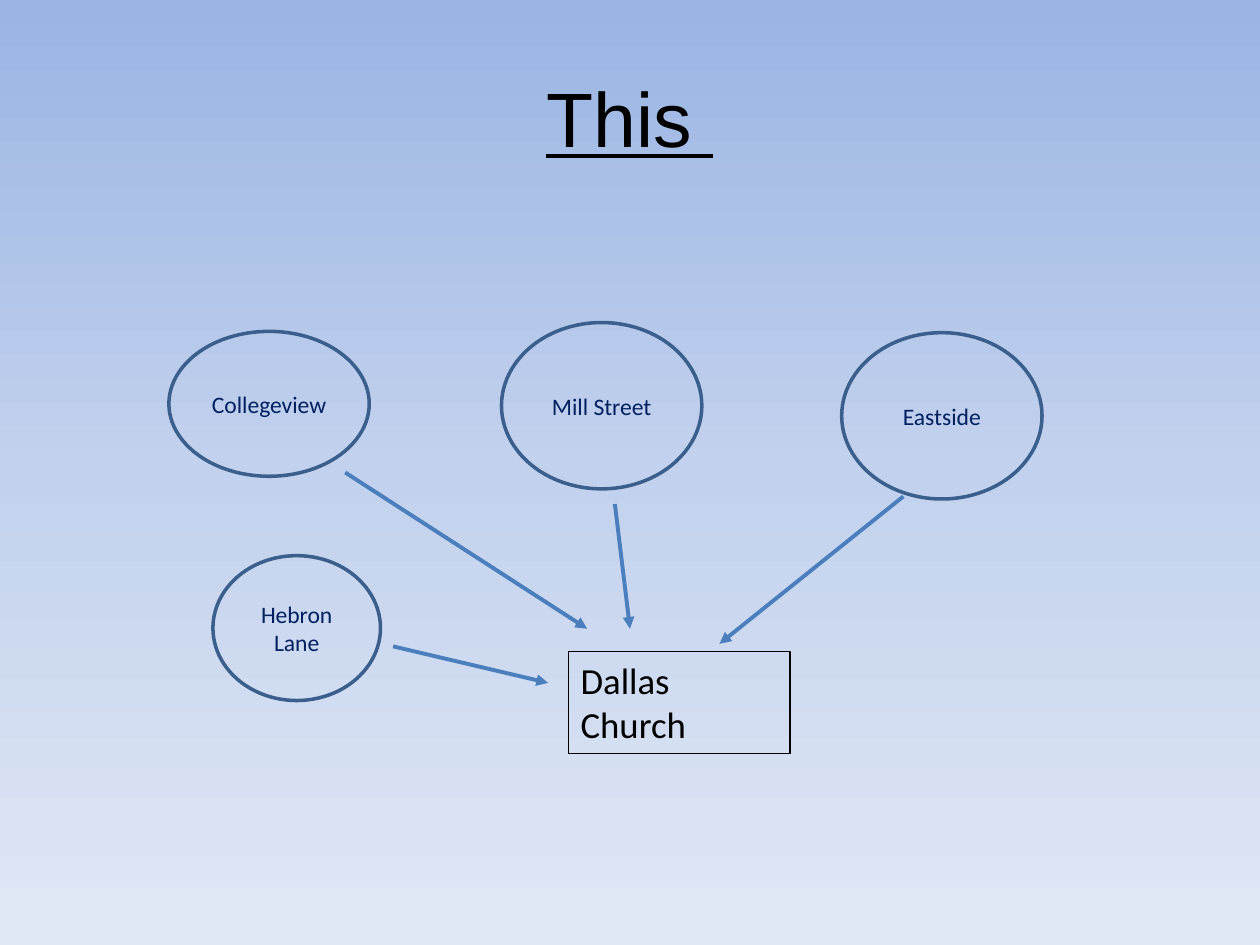
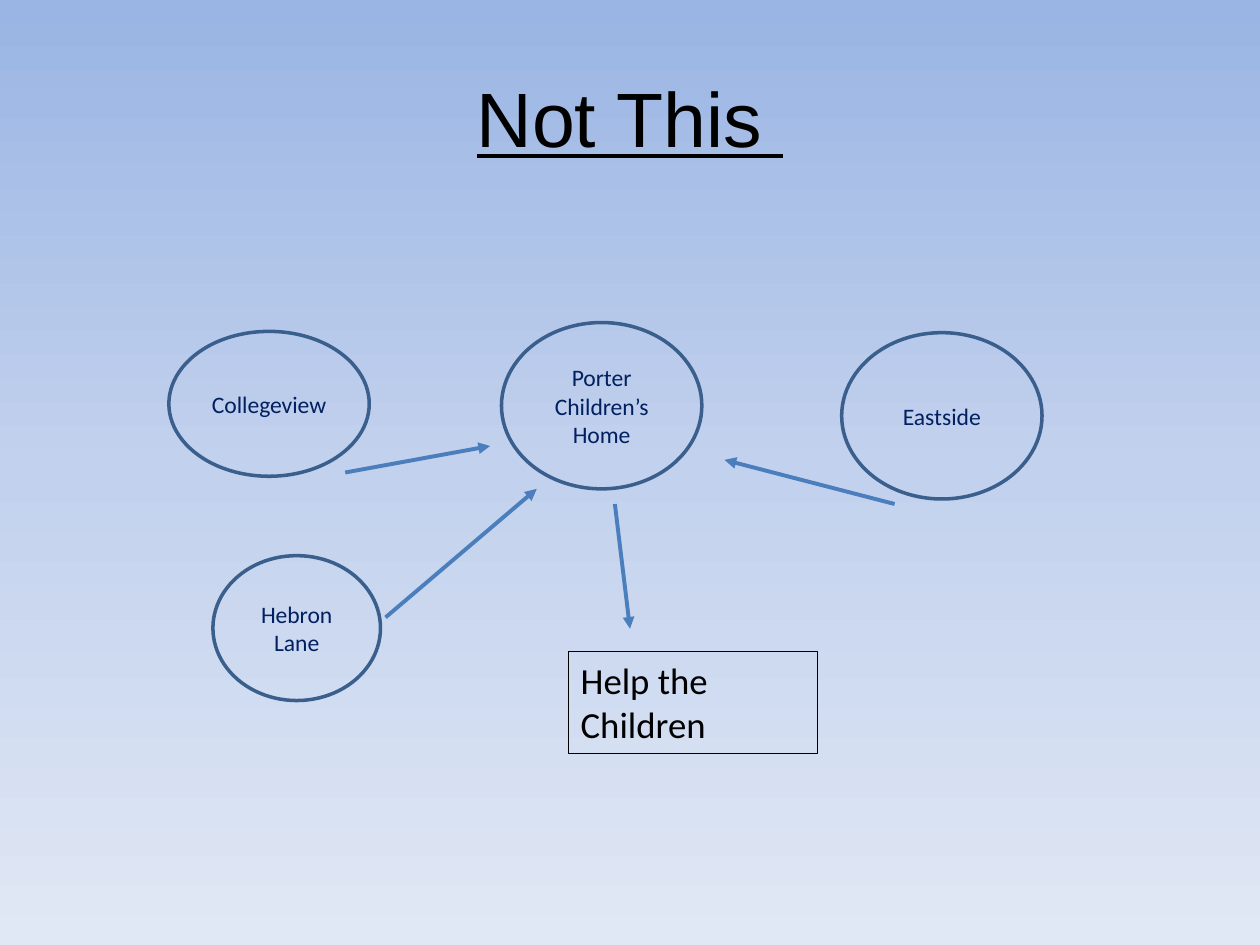
from copy import deepcopy
from dataclasses import dataclass

from pptx import Presentation
from pptx import util as u
from pptx.dml.color import RGBColor
from pptx.enum import shapes, text
from pptx.oxml.ns import qn
from pptx.oxml.xmlchemy import OxmlElement

PX = 9144  # one px is a hundredth of an inch


@dataclass(frozen=True)
class Theme:
    sky: tuple = ((0, "9AB5E4"), (0.5, "C2D1ED"), (1, "E1E8F5"))
    ink: str = "000000"
    navy: str = "002060"
    ring: str = "3A5F8C"
    arrow: str = "4B7EBC"
    title_font: str = "Arial"
    body_font: str = "Calibri"
    title_size: float = 44
    giver_size: float = 13.5
    goal_size: float = 21
    ring_width: float = 2
    arrow_width: float = 2.25
    frame_width: float = 0.75


@dataclass(frozen=True)
class Box:
    left: int
    top: int
    width: int
    height: int

    def emu(self) -> tuple:
        return self.left * PX, self.top * PX, self.width * PX, self.height * PX


@dataclass(frozen=True)
class Giver:
    name: str
    box: Box


@dataclass(frozen=True)
class Arrow:
    start: tuple
    end: tuple


@dataclass(frozen=True)
class Diagram:
    title: str
    hub: str
    goal: str
    goal_width: int
    arrows: tuple


THEME = Theme()
TITLE_BOX = Box(50, 30, 900, 125)
HUB_BOX = Box(398, 256, 159, 132)
GOAL_LEFT, GOAL_TOP, GOAL_HEIGHT = 451, 517, 81

# Parts found on both slides
CONGREGATIONS = (
    Giver("Collegeview", Box(134, 263, 159, 115)),
    Giver("Hebron Lane", Box(169, 441, 133, 115)),
    Giver("Eastside", Box(668, 264, 159, 132)),
)
HUB_TO_GOAL = Arrow((488, 400), (500, 499))

DIAGRAMS = (
    Diagram("This ", "Mill Street", "Dallas Church", 176, (
        Arrow((274, 375), (466, 499)),
        Arrow((717, 394), (571, 511)),
        HUB_TO_GOAL,
        Arrow((312, 513), (435, 542)),
    )),
    Diagram("Not This ", "Porter Children’s Home", "Help the Children", 198, (
        Arrow((274, 375), (389, 354)),
        Arrow((710, 400), (575, 365)),
        HUB_TO_GOAL,
        Arrow((306, 490), (426, 388)),
    )),
)


def rgb(code: str) -> RGBColor:
    return RGBColor.from_string(code)


def write(frame, words: str, font: str, size: float, color: str, align, anchor) -> None:
    frame.text = words
    frame.word_wrap = True
    frame.vertical_anchor = anchor
    paragraph = frame.paragraphs[0]
    paragraph.alignment = align
    paragraph.font.name = font
    paragraph.font.size = u.Pt(size)
    paragraph.font.color.rgb = rgb(color)


def paint_background(master) -> None:
    fill = master.background.fill
    fill.gradient()
    fill.gradient_angle = 270
    stop_list = master.element.find(".//" + qn("a:gsLst"))
    stop_list.append(deepcopy(stop_list[-1]))
    for stop, (position, color) in zip(fill.gradient_stops, THEME.sky):
        stop.position = position
        stop.color.rgb = rgb(color)


def add_title(slide, words: str) -> None:
    title = slide.shapes.title
    title.left, title.top, title.width, title.height = TITLE_BOX.emu()
    write(title.text_frame, words, THEME.title_font, THEME.title_size, THEME.ink,
          text.PP_ALIGN.CENTER, text.MSO_ANCHOR.MIDDLE)
    title.text_frame.paragraphs[0].font.underline = True


def add_outline(slide, kind, box: Box, color: str, width: float):
    outline = slide.shapes.add_shape(kind, *box.emu())
    outline.shadow.inherit = False
    outline.fill.background()
    outline.line.color.rgb = rgb(color)
    outline.line.width = u.Pt(width)
    return outline


def add_giver(slide, giver: Giver) -> None:
    ring = add_outline(slide, shapes.MSO_SHAPE.OVAL, giver.box, THEME.ring, THEME.ring_width)
    write(ring.text_frame, giver.name, THEME.body_font, THEME.giver_size, THEME.navy,
          text.PP_ALIGN.CENTER, text.MSO_ANCHOR.MIDDLE)


def add_goal(slide, words: str, width: int) -> None:
    box = Box(GOAL_LEFT, GOAL_TOP, width, GOAL_HEIGHT)
    goal = add_outline(slide, shapes.MSO_SHAPE.RECTANGLE, box, THEME.ink, THEME.frame_width)
    write(goal.text_frame, words, THEME.body_font, THEME.goal_size, THEME.ink,
          text.PP_ALIGN.LEFT, text.MSO_ANCHOR.TOP)
    goal.text_frame.auto_size = text.MSO_AUTO_SIZE.SHAPE_TO_FIT_TEXT


def add_arrow(slide, arrow: Arrow) -> None:
    ends = [length * PX for length in arrow.start + arrow.end]
    gift = slide.shapes.add_connector(shapes.MSO_CONNECTOR.STRAIGHT, *ends)
    gift.line.color.rgb = rgb(THEME.arrow)
    gift.line.width = u.Pt(THEME.arrow_width)
    head = OxmlElement("a:tailEnd")
    head.set("type", "triangle")
    gift.line._get_or_add_ln().append(head)
    gift._element.spPr.append(OxmlElement("a:effectLst"))


def add_diagram(deck, diagram: Diagram) -> None:
    slide = deck.slides.add_slide(deck.slide_layouts.get_by_name("Title Only"))
    add_title(slide, diagram.title)
    for congregation in CONGREGATIONS:
        add_giver(slide, congregation)
    add_goal(slide, diagram.goal, diagram.goal_width)
    for arrow in diagram.arrows:
        add_arrow(slide, arrow)
    add_giver(slide, Giver(diagram.hub, HUB_BOX))


def main() -> None:
    deck = Presentation()
    deck.slide_width, deck.slide_height = 1000 * PX, 750 * PX
    paint_background(deck.slide_master)
    for diagram in DIAGRAMS:
        add_diagram(deck, diagram)
    deck.save("out.pptx")


if __name__ == "__main__":
    main()
